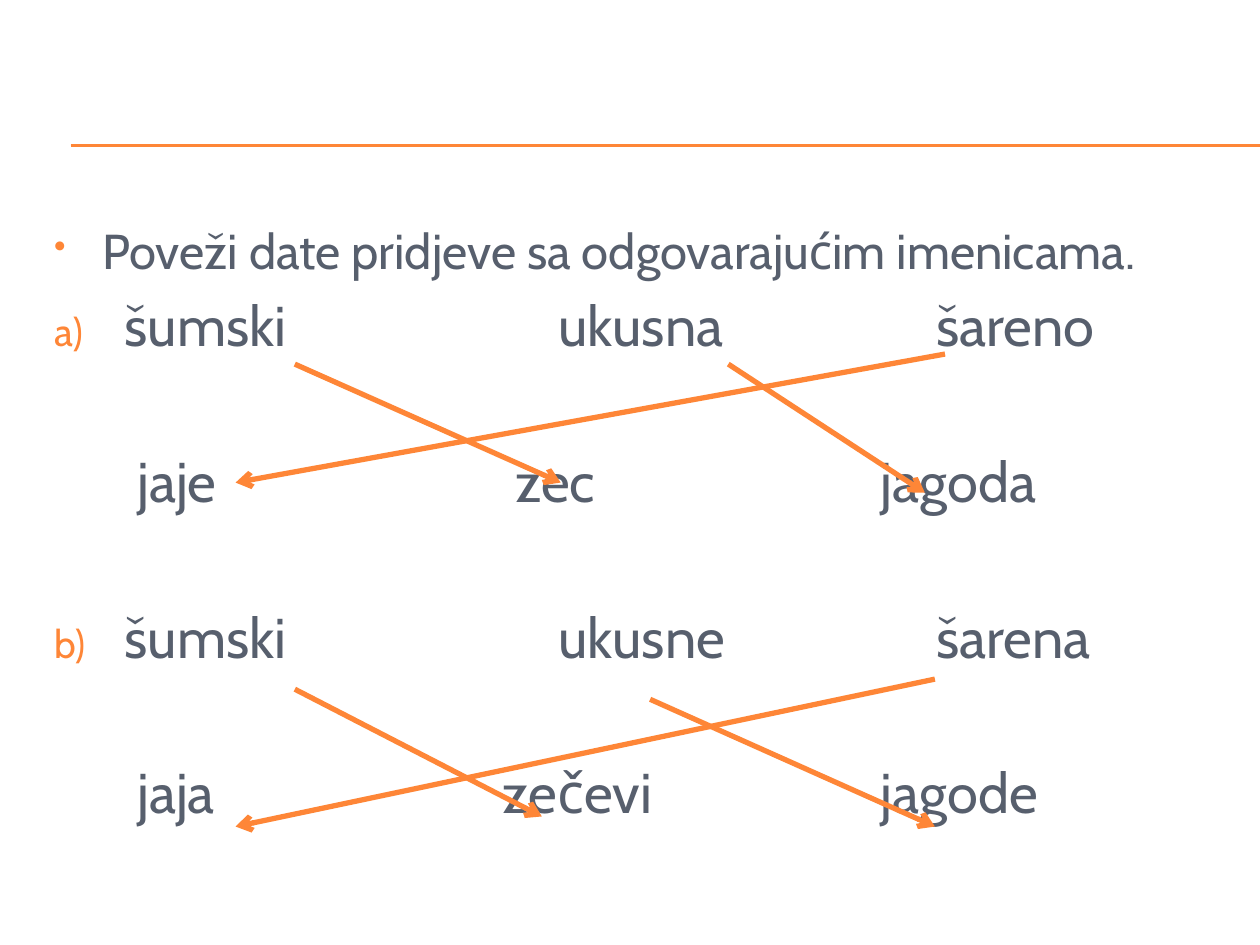
from dataclasses import dataclass

from lxml import etree
from pptx import Presentation
from pptx.dml.color import RGBColor
from pptx.enum.shapes import MSO_CONNECTOR
from pptx.enum.text import MSO_ANCHOR, MSO_AUTO_SIZE
from pptx.oxml.ns import qn
from pptx.util import Inches, Pt

STRAIGHT = MSO_CONNECTOR.STRAIGHT
TOP = MSO_ANCHOR.TOP
NO_AUTOFIT = MSO_AUTO_SIZE.NONE


@dataclass(frozen=True)
class Theme:
    accent: str = "FE8637"
    text: str = "575F6D"
    font: str = "Cabin"
    task_size: int = 28
    word_size: int = 32
    rule_width: float = 0.75
    arrow_width: float = 3


TASK = "Poveži date pridjeve sa odgovarajućim imenicama."
BULLET = ("a:buChar", {"char": "•"})
NO_BULLET = ("a:buNone", {})


def letter(number):
    return ("a:buAutoNum", {"type": "alphaLcParenR", "startAt": str(number)})


# Text, indent in inches, space before in points, marker
LINES = [
    (TASK, 0.38, 0, BULLET),
    ("šumski\t\t\tukusna\t\tšareno", 0.56, 6.4, letter(1)),
    ("\t jaje\t\t\t zec\t\t\tjagoda", 0.56, 50.6, NO_BULLET),
    ("šumski\t\t\tukusne\t\tšarena", 0.56, 50.6, letter(2)),
    ("\t jaja\t\t\tzečevi\t\tjagode", 0.56, 50.6, NO_BULLET),
]

# Start and end of each match between adjective and noun
MATCHES = [
    ((2.34, 2.89), (4.45, 3.83)),
    ((5.78, 2.89), (7.34, 3.91)),
    ((7.5, 2.81), (1.87, 3.83)),
    ((2.34, 5.47), (4.3, 6.48)),
    ((5.16, 5.55), (7.42, 6.56)),
    ((7.42, 5.39), (1.87, 6.56)),
]


class SlideBuilder:
    def __init__(self, slide, theme):
        self.slide = slide
        self.theme = theme

    def line(self, start, end, width, arrow=False):
        c = self.slide.shapes.add_connector(
            STRAIGHT, *(Inches(v) for v in (*start, *end)))
        c.line.color.rgb = RGBColor.from_string(self.theme.accent)
        c.line.width = Pt(width)
        if arrow:
            ln = c.line._get_or_add_ln()
            etree.SubElement(ln, qn("a:tailEnd"), type="arrow")
        etree.SubElement(c._element.spPr, qn("a:effectLst"))

    def body(self, left, top, width, height, lines):
        sp = self.slide.placeholders[1]
        box = {"left": left, "top": top, "width": width, "height": height}
        for name, value in box.items():
            setattr(sp, name, Inches(value))
        tf = sp.text_frame
        frame = {"word_wrap": True, "auto_size": NO_AUTOFIT,
                 "vertical_anchor": TOP}
        for name, value in frame.items():
            setattr(tf, name, value)
        for i, (text, indent, before, marker) in enumerate(lines):
            p = tf.add_paragraph() if i else tf.paragraphs[0]
            p.space_before = Pt(before)
            self.marker(p, indent, *marker)
            size = self.theme.word_size if i else self.theme.task_size
            self.run(p, text, size)

    def marker(self, p, indent, tag, attributes):
        """Give a paragraph its hanging indent, tab step and list marker."""
        pPr = p._p.get_or_add_pPr()
        hang = Inches(indent)
        for name, value in {"marL": hang, "indent": -hang,
                            "defTabSz": Inches(1)}.items():
            pPr.set(name, str(value))
        if tag != NO_BULLET[0]:
            color = etree.SubElement(pPr, qn("a:buClr"))
            etree.SubElement(color, qn("a:srgbClr"), val=self.theme.accent)
            etree.SubElement(pPr, qn("a:buSzPct"), val="70000")
            etree.SubElement(pPr, qn("a:buFontTx"))
        etree.SubElement(pPr, qn(tag), attributes)

    def run(self, p, text, size):
        r = p.add_run()
        r.text = text
        for name, value in {"name": self.theme.font, "size": Pt(size)}.items():
            setattr(r.font, name, value)
        r.font.color.rgb = RGBColor.from_string(self.theme.text)


def main():
    prs = Presentation()
    prs.slide_width, prs.slide_height = Inches(10), Inches(7.5)
    theme = Theme()
    s = prs.slides.add_slide(prs.slide_layouts[1])
    title = s.shapes.title._element
    title.getparent().remove(title)

    builder = SlideBuilder(s, theme)
    for y in (1.15, 1.16):
        builder.line((0.56, y), (10, y), theme.rule_width)
    builder.body(0.33, 1.7, 9.5, 5.41, LINES)
    for start, end in MATCHES:
        builder.line(start, end, theme.arrow_width, arrow=True)
    prs.save("out.pptx")


if __name__ == "__main__":
    main()
